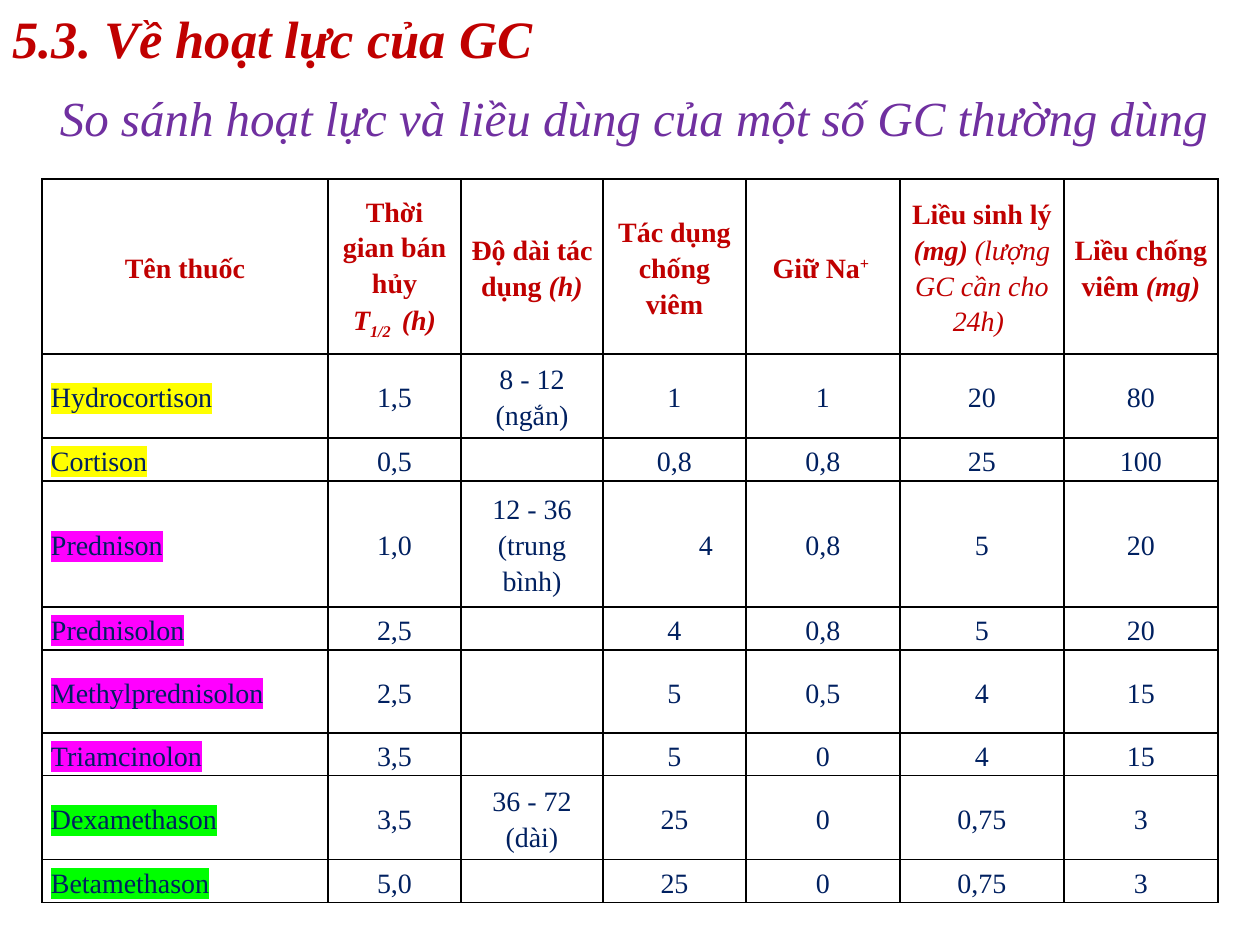
from lxml import etree
from pptx import Presentation
from pptx.dml.color import RGBColor
from pptx.enum.text import MSO_ANCHOR, MSO_AUTO_SIZE, PP_ALIGN
from pptx.oxml.ns import qn
from pptx.util import Emu, Pt

CENTER, JUSTIFY, LEFT = PP_ALIGN.CENTER, PP_ALIGN.JUSTIFY, PP_ALIGN.LEFT
MIDDLE = MSO_ANCHOR.MIDDLE
NO_AUTOFIT = MSO_AUTO_SIZE.NONE
PX = 914400 // 126

THEME = {
    "font": "Times New Roman",
    "red": "C00000", "purple": "7030A0", "navy": "002060", "black": "000000",
    "yellow": "FFFF00", "magenta": "FF00FF", "green": "00FF00",
    "title": Pt(30), "subtitle": Pt(28), "tab": Pt(32), "cell": Pt(16),
    "border": Pt(1),
}


def add_run(paragraph, text, color, formats, baseline=0, highlight=None):
    """Append a run; baseline is a percentage, highlight a theme colour name."""
    run = paragraph.add_run()
    run.text = text
    run.font.name = THEME["font"]
    run.font.color.rgb = RGBColor.from_string(THEME[color])
    for name, value in formats.items():
        setattr(run.font, name, value)
    properties = run._r.get_or_add_rPr()
    if baseline:
        properties.set("baseline", str(baseline * 1000))
    if highlight:
        mark = etree.Element(qn("a:highlight"))
        etree.SubElement(mark, qn("a:srgbClr"), val=THEME[highlight])
        properties.find(qn("a:solidFill")).addnext(mark)


def format_cell(cell):
    cell.vertical_anchor = MIDDLE
    cell.margin_left = cell.margin_right = Emu(9 * PX)
    cell.margin_top = cell.margin_bottom = 0
    cell.fill.background()
    properties = cell._tc.get_or_add_tcPr()
    for position, side in enumerate(("lnL", "lnR", "lnT", "lnB")):
        line = etree.Element(qn(f"a:{side}"), w=str(THEME["border"]))
        fill = etree.SubElement(line, qn("a:solidFill"))
        etree.SubElement(fill, qn("a:srgbClr"), val=THEME["black"])
        properties.insert(position, line)


presentation = Presentation()
presentation.slide_width, presentation.slide_height = Emu(1260 * PX), Emu(945 * PX)
slide = presentation.slides.add_slide(presentation.slide_layouts[1])
title = slide.shapes.title
title._element.getparent().remove(title._element)

# Heading lines
body = slide.placeholders[1]
body.left, body.top = 0, 0
body.width, body.height = presentation.slide_width, presentation.slide_height
text_frame = body.text_frame
text_frame.auto_size = NO_AUTOFIT
heading = text_frame.paragraphs[0]
add_run(heading, "5.3. Về hoạt lực của GC", "red",
        {"size": THEME["title"], "bold": True, "italic": True})
subtitle = text_frame.add_paragraph()
subtitle.alignment = JUSTIFY
add_run(subtitle, "\t", "black", {"size": THEME["tab"], "italic": True})
add_run(subtitle, "So sánh hoạt lực và liều dùng của một số GC thường dùng", "purple",
        {"size": THEME["subtitle"], "italic": True})
for paragraph in text_frame.paragraphs:
    etree.SubElement(paragraph._p.get_or_add_pPr(), qn("a:buNone"))

# Each header cell is a list of paragraphs, each paragraph a list of (text, style)
STYLES = {
    "bold": {"formats": {"bold": True}},
    "unit": {"formats": {"bold": True, "italic": True}},
    "note": {"formats": {"italic": True}},
    "sub": {"formats": {"bold": True, "italic": True}, "baseline": -25},
    "super": {"formats": {"bold": True}, "baseline": 30},
}
HEADERS = [
    [[("Tên thuốc", "bold")]],
    [[("Thời gian bán hủy", "bold")], [("T", "unit"), ("1/2 ", "sub"), (" (h)", "unit")]],
    [[("Độ dài tác dụng ", "bold"), ("(h)", "unit")]],
    [[("Tác dụng chống viêm", "bold")]],
    [[("Giữ Na", "bold"), ("+ ", "super")]],
    [[("Liều sinh lý ", "bold"), ("(mg)", "unit"), (" (lượng GC cần cho 24h) ", "note")]],
    [[("Liều chống viêm ", "bold"), ("(mg)", "unit")]],
]
DRUGS = [
    ("yellow", "Hydrocortison", "1,5", "8 - 12\n(ngắn)", "1", "1", "20", "80"),
    ("yellow", "Cortison", "0,5", "", "0,8", "0,8", "25", "100"),
    ("magenta", "Prednison", "1,0", "12 - 36\n(trung bình)", "4", "0,8", "5", "20"),
    ("magenta", "Prednisolon", "2,5", "", "4", "0,8", "5", "20"),
    ("magenta", "Methylprednisolon", "2,5", "", "5", "0,5", "4", "15"),
    ("magenta", "Triamcinolon", "3,5", "", "5", "0", "4", "15"),
    ("green", "Dexamethason", "3,5", "36 - 72\n(dài)", "25", "0", "0,75", "3"),
    ("green", "Betamethason", "5,0", "", "25", "0", "0,75", "3"),
]
COLUMN_WIDTHS = [286, 133, 142, 143, 154, 164, 154]
ROW_HEIGHTS = [175, 84, 43, 126, 43, 83, 43, 84, 43]

table = slide.shapes.add_table(
    len(ROW_HEIGHTS), len(COLUMN_WIDTHS), Emu(42 * PX), Emu(179 * PX),
    Emu(sum(COLUMN_WIDTHS) * PX), Emu(sum(ROW_HEIGHTS) * PX)).table
table.first_row = table.horz_banding = False
for column, width in zip(table.columns, COLUMN_WIDTHS):
    column.width = Emu(width * PX)
for row, height in zip(table.rows, ROW_HEIGHTS):
    row.height = Emu(height * PX)

for column_index, paragraphs in enumerate(HEADERS):
    frame = table.cell(0, column_index).text_frame
    for index, runs in enumerate(paragraphs):
        paragraph = frame.add_paragraph() if index else frame.paragraphs[0]
        for text, style in runs:
            add_run(paragraph, text, "red", **STYLES[style])

for row_index, (highlight, *values) in enumerate(DRUGS, start=1):
    for column_index, value in enumerate(values):
        frame = table.cell(row_index, column_index).text_frame
        for index, text in enumerate(value.split("\n")):
            paragraph = frame.add_paragraph() if index else frame.paragraphs[0]
            if text:
                add_run(paragraph, text, "navy", {},
                        highlight=None if column_index else highlight)

for row_index, row in enumerate(table.rows):
    for column_index, cell in enumerate(row.cells):
        format_cell(cell)
        for paragraph in cell.text_frame.paragraphs:
            paragraph.alignment = LEFT if row_index and not column_index else CENTER
            paragraph.line_spacing = 1.15
            for run in paragraph.runs:
                run.font.size = THEME["cell"]
            if not paragraph.runs:
                end = etree.SubElement(paragraph._p, qn("a:endParaRPr"))
                end.set("sz", str(int(THEME["cell"].pt * 100)))

# The anti-inflammatory value of Prednison is indented one level
indented = table.cell(3, 3).text_frame.paragraphs[0]
indented.level = 1
indented._p.get_or_add_pPr().set("marL", str(63 * PX))

presentation.save("out.pptx")
